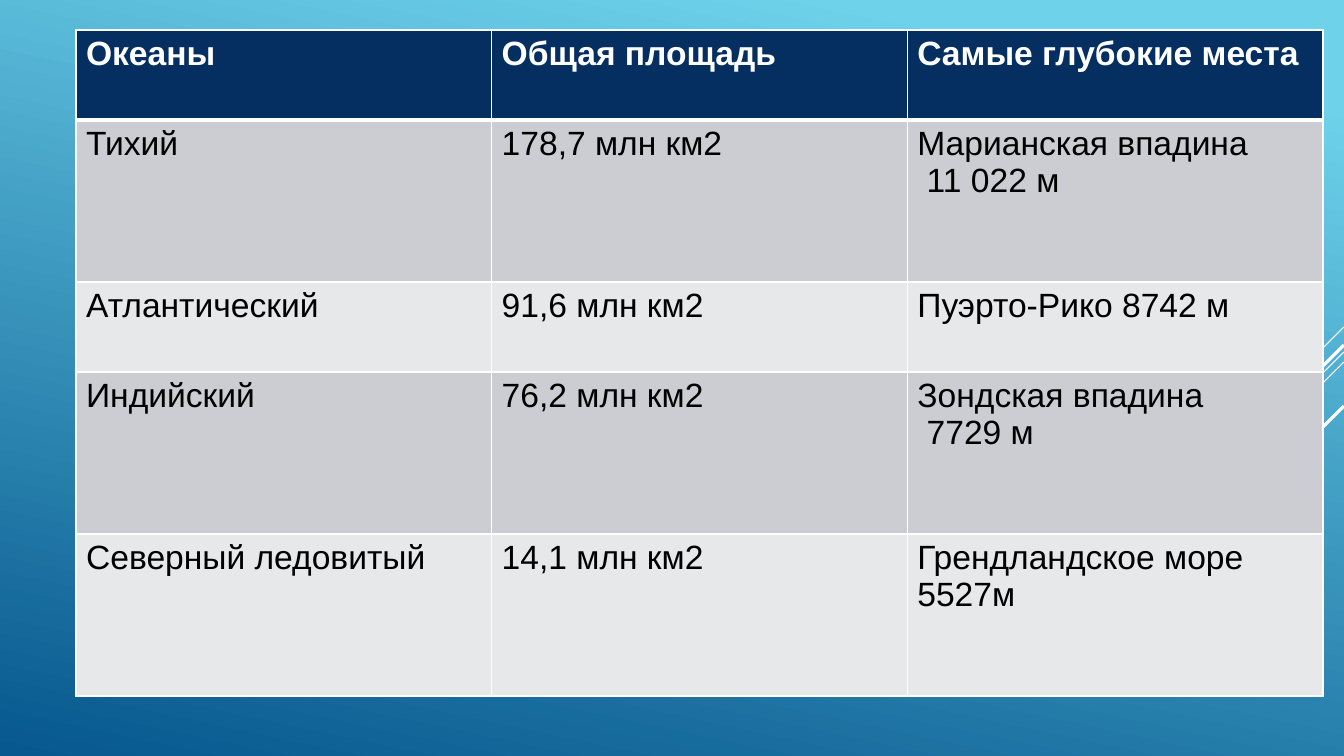
from lxml.etree import SubElement
from pptx import Presentation
from pptx.dml.color import RGBColor
from pptx.enum.shapes import MSO_CONNECTOR
from pptx.oxml.ns import qn
from pptx.util import Pt

SCALE = 914400 / 100.8
SLIDE_WIDTH, SLIDE_HEIGHT = 1344, 756
BACKGROUND = [(0.1, "6ED2EB"), (1, "06588E")]
DIAGONALS = [(327, 101, 0.75), (352, 329, 0.75), (362, 209, 0.75), (345, 193, 2.25), (406, 140, 2.25)]
TABLE_LEFT, TABLE_TOP, TABLE_WIDTH = 76, 30, 1247
ROW_HEIGHTS = [90, 162, 90, 162, 162]
OCEANS = [
    ("Океаны", "Общая площадь", "Самые глубокие места"),
    ("Тихий", "178,7 млн км2", "Марианская впадина\n 11 022 м"),
    ("Атлантический", "91,6 млн км2", "Пуэрто-Рико 8742 м"),
    ("Индийский", "76,2 млн км2", "Зондская впадина\n 7729 м"),
    ("Северный ледовитый", "14,1 млн км2", "Грендландское море 5527м"),
]
HEADER_FILL = "052F61"
BAND_FILLS = ["E7E8EA", "CCCDD2"]


def px(length):
    return round(length * SCALE)


def color(value):
    return RGBColor.from_string(value)


def write_text(frame, text, size=24, font="Arial", fill="000000", bold=False):
    frame.text = text
    for paragraph in frame.paragraphs:
        for run in paragraph.runs:
            run.font.size = Pt(size)
            run.font.name = font
            run.font.bold = bold
            run.font.color.rgb = color(fill)


def add_borders(cell, widths, fill="FFFFFF"):
    properties = cell._tc.get_or_add_tcPr()
    for side, width in widths.items():
        border = SubElement(properties, qn(f"a:ln{side}"), w=str(Pt(width)))
        solid = SubElement(border, qn("a:solidFill"))
        SubElement(solid, qn("a:srgbClr"), val=fill)


def add_diagonal(slide, top, length, width):
    connector = slide.shapes.add_connector(
        MSO_CONNECTOR.STRAIGHT, px(SLIDE_WIDTH), px(top), px(SLIDE_WIDTH - length), px(top + length))
    connector.line.color.rgb = color("FFFFFF")
    connector.line.width = Pt(width)
    SubElement(connector._element.spPr, qn("a:effectLst"))


def add_ocean_table(slide):
    table = slide.shapes.add_table(
        len(OCEANS), len(OCEANS[0]), px(TABLE_LEFT), px(TABLE_TOP),
        px(TABLE_WIDTH), px(sum(ROW_HEIGHTS))).table
    for row_index, (height, texts) in enumerate(zip(ROW_HEIGHTS, OCEANS)):
        table.rows[row_index].height = px(height)
        header = row_index == 0
        for column_index, text in enumerate(texts):
            cell = table.cell(row_index, column_index)
            add_borders(cell, {"L": 1, "R": 1, "T": 3 if row_index == 1 else 1, "B": 3 if header else 1})
            cell.fill.solid()
            cell.fill.fore_color.rgb = color(HEADER_FILL if header else BAND_FILLS[row_index % 2])
            write_text(cell.text_frame, text, fill="FFFFFF" if header else "000000", bold=header)


def main():
    presentation = Presentation()
    presentation.slide_width = px(SLIDE_WIDTH)
    presentation.slide_height = px(SLIDE_HEIGHT)
    slide = presentation.slides.add_slide(presentation.slide_layouts[6])
    background = slide.background.fill
    background.gradient()
    background.gradient_angle = 258
    for stop, (position, value) in zip(background.gradient_stops, BACKGROUND):
        stop.position = position
        stop.color.rgb = color(value)
    for top, length, width in DIAGONALS:
        add_diagonal(slide, top, length, width)
    add_ocean_table(slide)
    presentation.save("out.pptx")


if __name__ == "__main__":
    main()
